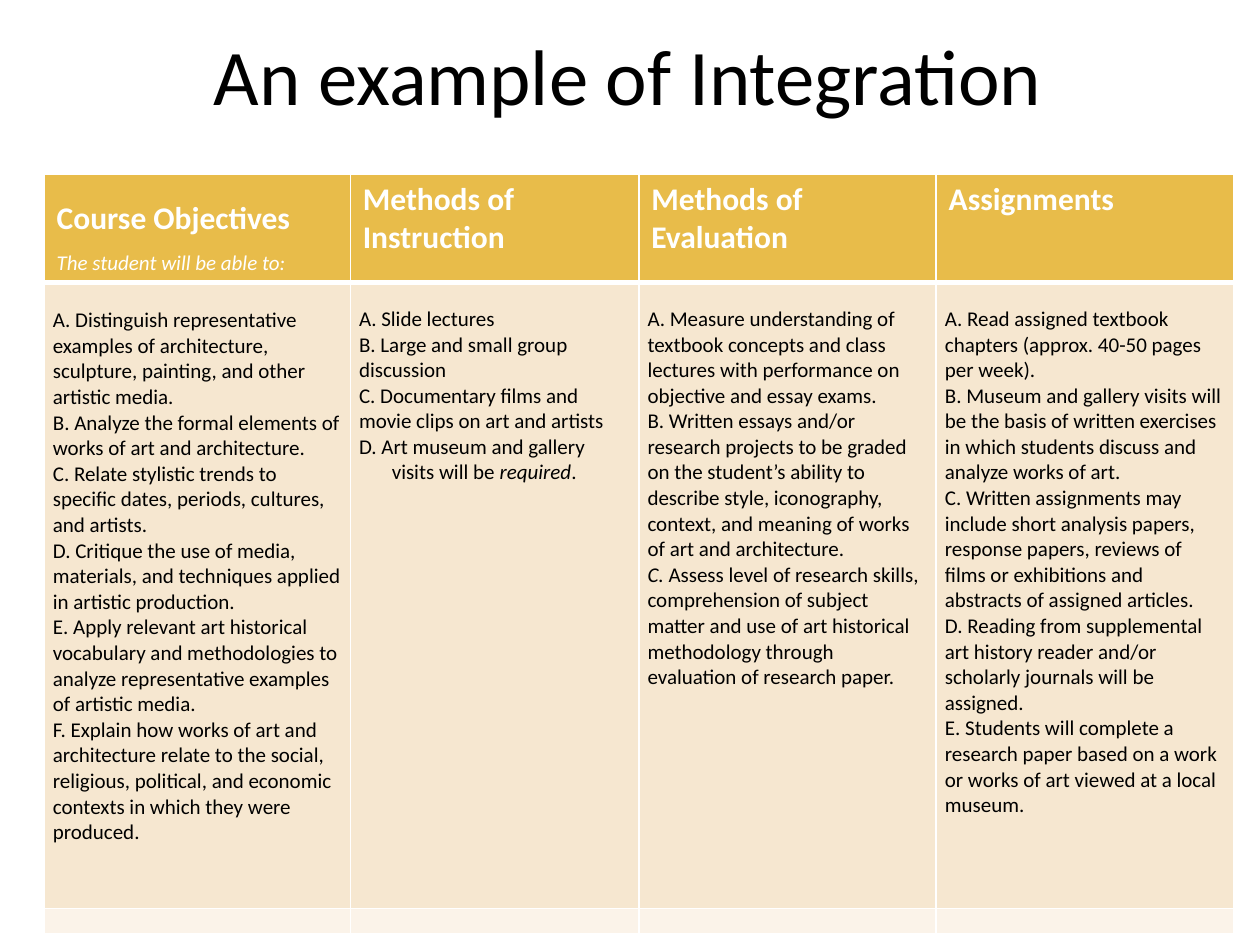
import pptx
import pptx.util
from lxml import etree
from pptx.dml.color import RGBColor
from pptx.enum.text import MSO_ANCHOR, PP_ALIGN
from pptx.oxml.ns import qn
from pptx.util import Inches

COLORS = {"header": "E8BC4A", "body": "F6E7D0", "last": "FBF3E9",
          "white": "FFFFFF", "black": "000000"}


def add_text(paragraph, text, size=12, color="black", bold=False, italic=False):
    run = paragraph.add_run()
    run.text = text
    run.font.name = "Calibri"
    run.font.size = pptx.util.Pt(size)
    run.font.color.rgb = RGBColor.from_string(COLORS[color])
    run.font.bold = bold
    run.font.italic = italic


def style_cell(cell, fill, top=1, bottom=1):
    """Fill the cell and give it white borders, with widths in points."""
    cell.fill.solid()
    cell.fill.fore_color.rgb = RGBColor.from_string(COLORS[fill])
    properties = cell._tc.get_or_add_tcPr()
    borders = {"lnL": 1, "lnR": 1, "lnT": top, "lnB": bottom}
    for position, (side, width) in enumerate(borders.items()):
        line = etree.Element(qn(f"a:{side}"), w=str(pptx.util.Pt(width)))
        solid = etree.SubElement(line, qn("a:solidFill"))
        etree.SubElement(solid, qn("a:srgbClr"), val=COLORS["white"])
        properties.insert(position, line)


headings = ["Course Objectives", "Methods of Instruction",
            "Methods of Evaluation", "Assignments"]
objectives = [
    "A. Distinguish representative examples of architecture, sculpture, "
    "painting, and other artistic media.",
    "B. Analyze the formal elements of works of art and architecture.",
    "C. Relate stylistic trends to specific dates, periods, cultures, and artists.",
    "D. Critique the use of media, materials, and techniques applied in "
    "artistic production.",
    "E. Apply relevant art historical vocabulary and methodologies to analyze "
    "representative examples of artistic media.",
    "F. Explain how works of art and architecture relate to the social, religious, "
    "political, and economic contexts in which they were produced.",
]
# A tuple holds (text, italic) runs of one paragraph.
instruction = [
    "A. Slide lectures",
    "B. Large and small group discussion",
    "C. Documentary films and movie clips on art and artists",
    (("D. Art museum and gallery visits will be ", False),
     ("required", True), (".", False)),
]
evaluation = [
    "A. Measure understanding of textbook concepts and class lectures with "
    "performance on objective and essay exams.",
    "B. Written essays and/or research projects to be graded on the student’s "
    "ability to describe style, iconography, context, and meaning of works of "
    "art and architecture.",
    (("C. ", True),
     ("Assess level of research skills, comprehension of subject matter and use of "
      "art historical methodology through evaluation of research paper.", False)),
]
assignments = [
    "A. Read assigned textbook chapters (approx. 40-50 pages per week).",
    "B. Museum and gallery visits will be the basis of written exercises in which "
    "students discuss and analyze works of art.",
    "C. Written assignments may include short analysis papers, response papers, "
    "reviews of films or exhibitions and abstracts of assigned articles.",
    "D. Reading from supplemental art history reader and/or scholarly journals "
    "will be assigned.",
    "E. Students will complete a research paper based on a work or works of art "
    "viewed at a local museum.",
]

presentation = pptx.Presentation()
presentation.slide_width = Inches(10)
presentation.slide_height = Inches(7.5)
slide = presentation.slides.add_slide(presentation.slide_layouts[5])

title = slide.shapes.title
title.left, title.top = Inches(0.5), Inches(0.17)
title.width, title.height = Inches(8.96), Inches(0.84)
title.text_frame.vertical_anchor = MSO_ANCHOR.MIDDLE
title.text_frame.paragraphs[0].alignment = PP_ALIGN.CENTER
add_text(title.text_frame.paragraphs[0], "An example of Integration", size=45)

course = slide.shapes.add_table(3, 4, Inches(0.35), Inches(1.38),
                                Inches(9.44), Inches(6.01)).table
for column, width in zip(course.columns, [2.43, 2.29, 2.36, 2.36]):
    column.width = Inches(width)
for row, height in zip(course.rows, [0.84, 4.97, 0.2]):
    row.height = Inches(height)

for index, heading in enumerate(headings):
    cell = course.cell(0, index)
    style_cell(cell, "header", bottom=3)
    add_text(cell.text_frame.paragraphs[0], heading, size=18, color="white", bold=True)

objectives_heading = course.cell(0, 0).text_frame
add_text(objectives_heading.add_paragraph(), "The student will be able to:",
         color="white", italic=True)
for paragraph in objectives_heading.paragraphs:
    paragraph.line_spacing = 1.5

for index, items in enumerate([objectives, instruction, evaluation, assignments]):
    cell = course.cell(1, index)
    style_cell(cell, "body", top=3)
    cell.margin_left = cell.margin_right = Inches(0.07)
    cell.margin_top = Inches(0.2 if index == 0 else 0.19)
    cell.margin_bottom = 0
    for number, item in enumerate(items):
        frame = cell.text_frame
        paragraph = frame.add_paragraph() if number else frame.paragraphs[0]
        runs = ((item, False),) if isinstance(item, str) else item
        for text, italic in runs:
            add_text(paragraph, text, italic=italic)

museum_visits = course.cell(1, 1).text_frame.paragraphs[-1]
hanging = museum_visits._p.get_or_add_pPr()
hanging.set("marL", str(Inches(0.26)))
hanging.set("indent", str(-Inches(0.26)))

for cell in course.rows[2].cells:
    style_cell(cell, "last")
    cell.margin_top = cell.margin_bottom = 0
    # The size of an empty cell's text sets the least height of its row.
    etree.SubElement(cell.text_frame.paragraphs[0]._p, qn("a:endParaRPr"), sz="1100")

presentation.save("out.pptx")
